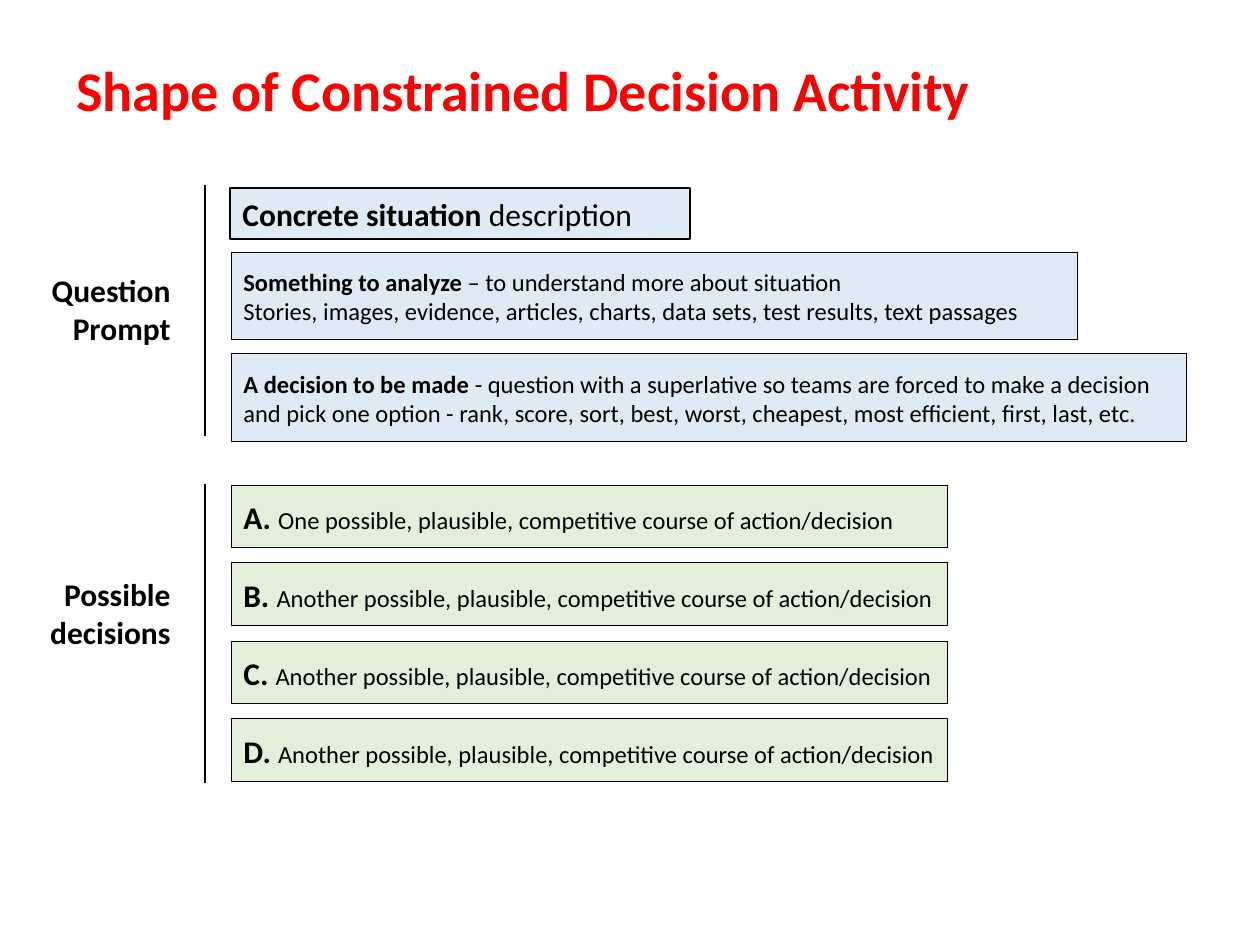
from lxml.etree import SubElement
from pptx import Presentation
from pptx.dml.color import RGBColor
from pptx.enum.shapes import MSO_CONNECTOR, MSO_SHAPE
from pptx.enum.text import MSO_ANCHOR, PP_ALIGN
from pptx.oxml.ns import qn
from pptx.util import Pt

PX = 914400 / 126  # EMU in one px
FONT = "Calibri"
COLORS = {"title": "FF0000", "ink": "000000", "prompt": "DEEBF7", "option": "E2F0D9"}

# Content: each paragraph is a list of (text, size, bold) runs
TITLE = "Shape of Constrained Decision Activity"
PROMPTS = [  # left, top, width, height, line width, paragraphs
    (230, 188, 460, 51, 0.75, [
        [("Concrete situation ", 18, True), ("description", 18, False)]]),
    (231, 252, 847, 88, 0.5, [
        [("Something to analyze ", 14, True),
         ("– to understand more about situation", 14, False)],
        [("Stories, images, evidence, articles, charts, data sets, "
          "test results, text passages", 14, False)]]),
    (231, 354, 956, 88, 0.5, [
        [("A decision to be made ", 14, True),
         ("- question with a superlative so teams are forced to make a decision "
          "and pick one option - rank, score, sort, best, worst, cheapest, "
          "most efficient, first, last, etc.", 14, False)]]),
]
OPTIONS = [("A. ", "One"), ("B. ", "Another"), ("C. ", "Another"), ("D. ", "Another")]
OPTION_ENDING = " possible, plausible, competitive course of action/decision"
GROUPS = [  # label paragraphs, label top, bracket top, bracket bottom
    (["Question", "Prompt"], 265, 185, 436),
    (["Possible decisions"], 569, 484, 783),
]
OPTION_TOP, OPTION_STEP = 485, 78
BRACKET_X = 205


def px(*values):
    return [round(value * PX) for value in values]


def write(shape, paragraphs, color="ink", align=PP_ALIGN.LEFT, anchor=MSO_ANCHOR.TOP):
    frame = shape.text_frame
    frame.word_wrap = True
    frame.vertical_anchor = anchor
    for index, runs in enumerate(paragraphs):
        paragraph = frame.paragraphs[0] if index == 0 else frame.add_paragraph()
        paragraph.alignment = align
        for text, size, bold in runs:
            run = paragraph.add_run()
            run.text = text
            run.font.name = FONT
            run.font.size = Pt(size)
            run.font.bold = bold
            run.font.color.rgb = RGBColor.from_string(COLORS[color])


def add_box(slide, bounds, fill, line_width, paragraphs):
    box = slide.shapes.add_shape(MSO_SHAPE.RECTANGLE, *px(*bounds))
    box.shadow.inherit = False
    box.fill.solid()
    box.fill.fore_color.rgb = RGBColor.from_string(COLORS[fill])
    box.line.color.rgb = RGBColor.from_string(COLORS["ink"])
    box.line.width = Pt(line_width)
    write(box, paragraphs, anchor=MSO_ANCHOR.MIDDLE)


def add_bracket(slide, top, bottom):
    line = slide.shapes.add_connector(
        MSO_CONNECTOR.STRAIGHT, *px(BRACKET_X, bottom, BRACKET_X, top))
    line.line.color.rgb = RGBColor.from_string(COLORS["ink"])
    line.line.width = Pt(1)
    SubElement(line._element.spPr, qn("a:effectLst"))


presentation = Presentation()
presentation.slide_width, presentation.slide_height = px(1260, 945)
slide = presentation.slides.add_slide(presentation.slide_layouts[5])

# Title
title = slide.shapes.title
title.left, title.top, title.width, title.height = px(-142, 49, 1331, 81)
write(title, [[(TITLE, 32, True)]], "title", PP_ALIGN.CENTER)

# Question prompt boxes
for *bounds, line_width, paragraphs in PROMPTS:
    add_box(slide, bounds, "prompt", line_width, paragraphs)

# Possible decisions
for index, (letter, opening) in enumerate(OPTIONS):
    bounds = (231, OPTION_TOP + index * OPTION_STEP, 717, 63)
    runs = [(letter, 18, True), (opening + OPTION_ENDING, 14, False)]
    add_box(slide, bounds, "option", 0.5, [runs])

# Group labels and vertical lines
for lines, label_top, bracket_top, bracket_bottom in GROUPS:
    add_bracket(slide, bracket_top, bracket_bottom)
    label = slide.shapes.add_textbox(*px(32, label_top, 151, 89))
    write(label, [[(line, 18, True)] for line in lines], align=PP_ALIGN.RIGHT)

presentation.save("out.pptx")
